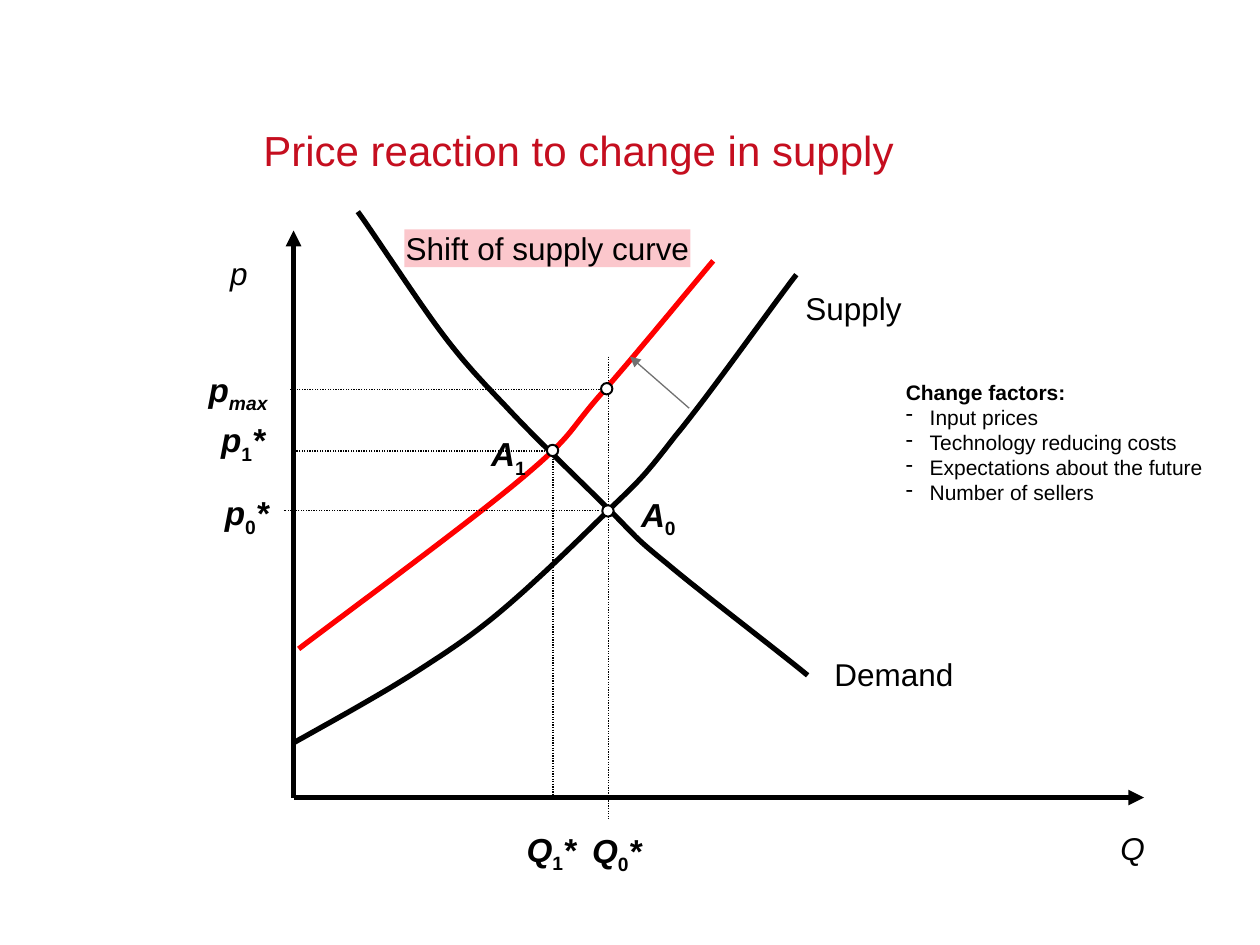
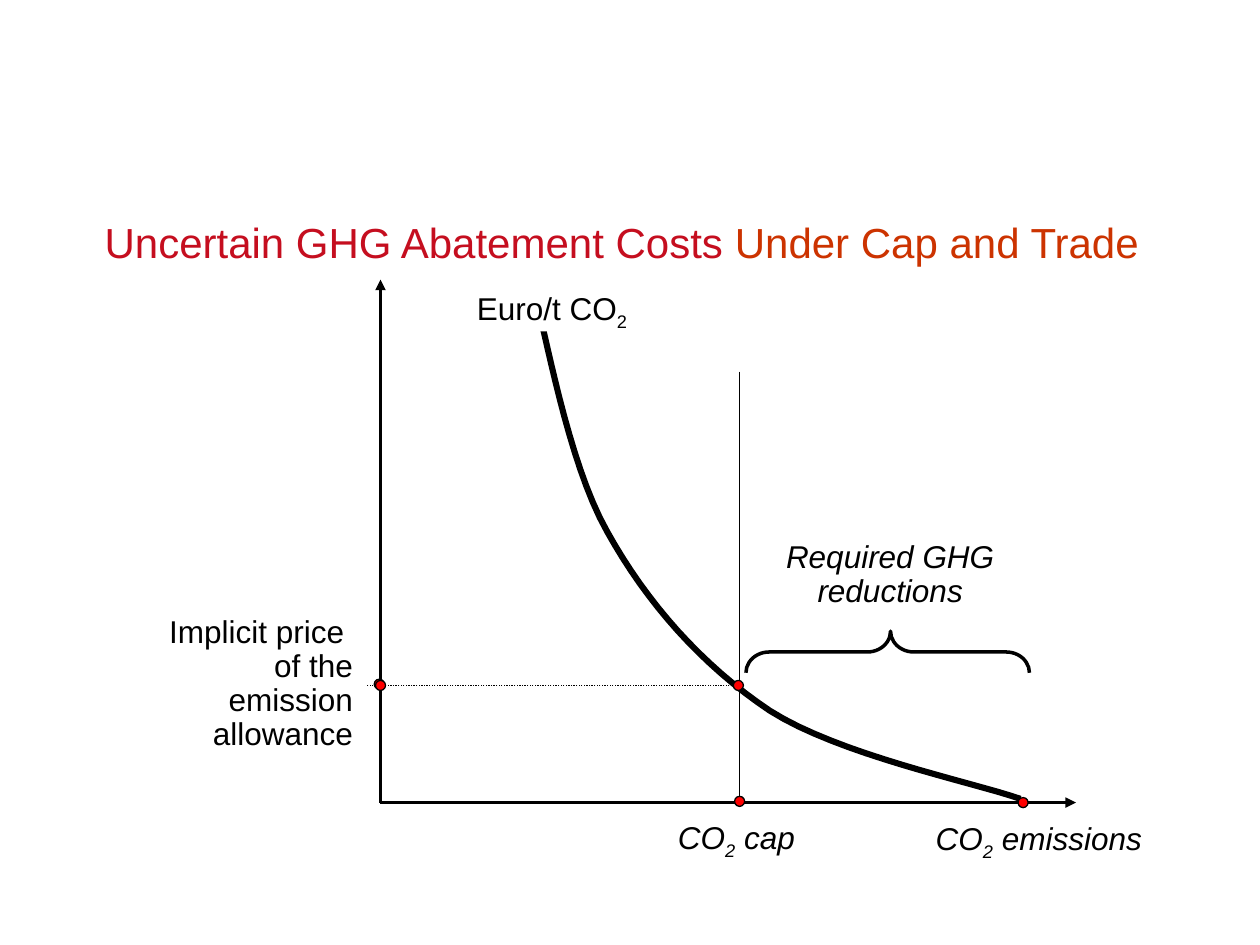
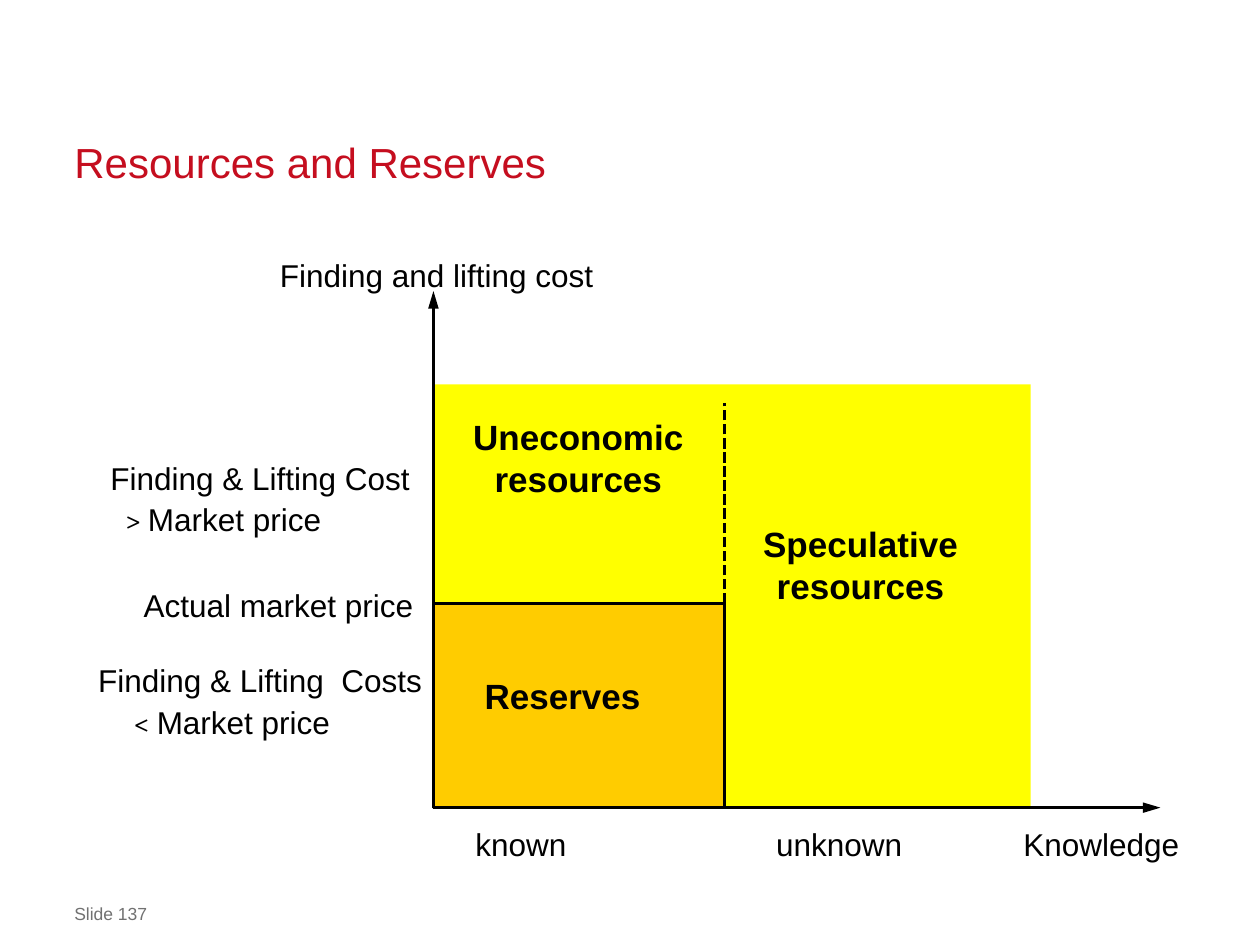
from dataclasses import dataclass

from lxml.etree import SubElement
from pptx import Presentation
from pptx.dml.color import RGBColor
from pptx.enum.dml import MSO_LINE_DASH_STYLE as Dash
from pptx.enum.shapes import MSO_CONNECTOR, MSO_SHAPE
from pptx.enum.text import MSO_ANCHOR, MSO_AUTO_SIZE, PP_ALIGN as Align
from pptx.oxml.ns import qn
from pptx.util import Pt

SCALE = 9144
TITLE_ONLY = 5


@dataclass(frozen=True)
class Theme:
    """Colours, fonts and type sizes of the deck."""
    title: str = "C50E1F"
    accent: str = "CC3300"
    ink: str = "000000"
    grey: str = "717171"
    white: str = "FFFFFF"
    red: str = "FF0000"
    pink: str = "FBC7CC"
    yellow: str = "FFFF00"
    orange: str = "FFCC00"
    font: str = "Arial"
    sign_font: str = "Cambria"
    title_size: int = 24
    title_leading: int = 30
    area_size: int = 20
    symbol_size: int = 19
    label_size: int = 18
    sign_size: int = 17
    note_size: int = 12
    footer_size: int = 10


THEME = Theme()


@dataclass(frozen=True)
class Box:
    """A rectangle in px on the page."""
    left: int
    top: int
    width: int
    height: int

    def sub(self, left, top, width, height):
        """Return a box placed relative to this one."""
        return Box(self.left + left, self.top + top, width, height)

    def point(self, x, y):
        """Return a relative point in EMU."""
        return (self.left + x) * SCALE, (self.top + y) * SCALE

    def emu(self):
        """Return left, top, width and height in EMU."""
        return tuple(n * SCALE for n in (self.left, self.top, self.width, self.height))


def format_font(font, name=None, size=None, color=None, bold=None, italic=None):
    """Set the given traits of a font."""
    if name:
        font.name = name
    if size:
        font.size = Pt(size)
    if color:
        font.color.rgb = RGBColor.from_string(color)
    if bold is not None:
        font.bold = bold
    if italic is not None:
        font.italic = italic


def subscripts(text, **traits):
    """Split text at underscores into spans, every second one a subscript."""
    return [(part, dict(traits, baseline=-25000) if index % 2 else {})
            for index, part in enumerate(text.split("_")) if part]


def write(para, content, align=Align.LEFT, spacing=None, **traits):
    """Fill a paragraph with a string or with spans of text and traits."""
    para.alignment = align
    if spacing:
        para.line_spacing = spacing
    base = dict(name=THEME.font, size=THEME.label_size, color=THEME.ink)
    format_font(para.font, **{**base, **traits})
    spans = [(content, {})] if isinstance(content, str) else content
    for text, extra in spans:
        extra = dict(extra)
        baseline = extra.pop("baseline", None)
        for index, piece in enumerate(text.split("\n")):
            if index:
                para.add_line_break()
            span = para.add_run()
            span.text = piece
            format_font(span.font, **extra)
            if baseline:
                span.font._element.set("baseline", str(baseline))


def set_frame(frame, inset=(0, 0), wrap=True, anchor=MSO_ANCHOR.TOP):
    """Set the margins, wrapping and anchor of a text frame."""
    frame.auto_size = MSO_AUTO_SIZE.NONE
    frame.word_wrap = wrap
    frame.vertical_anchor = anchor
    frame.margin_left = frame.margin_right = inset[0] * SCALE
    frame.margin_top = frame.margin_bottom = inset[1] * SCALE


def add_text(page, box, content, fill=None, inset=(0, 0), wrap=False,
             align=Align.CENTER, **style):
    """Add a one-paragraph text box."""
    shape = page.shapes.add_textbox(*box.emu())
    if fill:
        shape.fill.solid()
        shape.fill.fore_color.rgb = RGBColor.from_string(fill)
    set_frame(shape.text_frame, inset, wrap)
    write(shape.text_frame.paragraphs[0], content, align, **style)


def set_line(line, width, color=THEME.ink):
    """Set the width and colour of a line."""
    line.width = Pt(width)
    line.color.rgb = RGBColor.from_string(color)


def add_line(page, box, start, end, width=0.75, color=THEME.ink, dash=None, arrow=None):
    """Add a straight line, with an arrowhead of the given length if any."""
    line = page.shapes.add_connector(
        MSO_CONNECTOR.STRAIGHT, *box.point(*start), *box.point(*end))
    set_line(line.line, width, color)
    if dash:
        line.line.dash_style = dash
    if arrow:
        SubElement(line.line._get_or_add_ln(), qn("a:tailEnd"),
                   type="triangle", w="med", len=arrow)
    SubElement(line._element.spPr, qn("a:effectLst"))


def add_axes(page, box, width, arrow="med"):
    """Draw both axes from the lower left corner of the plot."""
    for end in ((box.width, box.height), (0, 0)):
        add_line(page, box, (0, box.height), end, width, arrow=arrow)


def add_shape(page, box, kind, fill=None, line=None, color=THEME.ink):
    """Add a preset shape with an optional fill and outline."""
    shape = page.shapes.add_shape(kind, *box.emu())
    shape.shadow.inherit = False
    if fill:
        shape.fill.solid()
        shape.fill.fore_color.rgb = RGBColor.from_string(fill)
    else:
        shape.fill.background()
    if line:
        set_line(shape.line, line, color)
    else:
        shape.line.fill.background()
    return shape


def add_markers(page, box, corners, size, fill, line):
    """Add equal round markers at the given corners."""
    for x, y in corners:
        add_shape(page, box.sub(x, y, size, size), MSO_SHAPE.OVAL, fill, line)


def bezier_points(knots, steps=16):
    """Yield points along a chain of cubic curves."""
    yield knots[0]
    for first in range(0, len(knots) - 1, 3):
        controls = knots[first:first + 4]
        for step in range(1, steps + 1):
            t = step / steps
            weights = ((1 - t) ** 3, 3 * t * (1 - t) ** 2, 3 * t * t * (1 - t), t ** 3)
            yield tuple(sum(w * c[axis] for w, c in zip(weights, controls))
                        for axis in (0, 1))


def add_curve(page, box, knots, width, color=THEME.ink):
    """Draw an open smooth curve through a chain of control points."""
    start, *rest = (box.point(*point) for point in bezier_points(knots))
    builder = page.shapes.build_freeform(round(start[0]), round(start[1]))
    builder.add_line_segments([(round(x), round(y)) for x, y in rest], close=False)
    curve = builder.convert_to_shape()
    curve.shadow.inherit = False
    curve.fill.background()
    set_line(curve.line, width, color)


def add_page(deck, box, title):
    """Add a title-only slide and format its title."""
    page = deck.slides.add_slide(deck.slide_layouts[TITLE_ONLY])
    holder = page.shapes.title
    holder.left, holder.top, holder.width, holder.height = box.emu()
    set_frame(holder.text_frame, anchor=MSO_ANCHOR.BOTTOM)
    write(holder.text_frame.paragraphs[0], title, spacing=Pt(THEME.title_leading),
          size=THEME.title_size, color=THEME.title)
    return page


def supply_plot(page, box):
    """Draw demand, old and new supply with their equilibria."""
    demand = [(51, -15), (62, 0), (94, 49), (113, 75), (132, 101), (145, 115),
              (168, 139), (191, 164), (230, 201), (251, 222), (272, 243),
              (270, 243), (296, 264), (322, 286), (385, 334), (408, 353)]
    supply = [(1, 406), (17, 397), (68, 369), (96, 351), (124, 333), (141, 322),
              (167, 300), (193, 278), (230, 242), (253, 219), (276, 197),
              (279, 194), (303, 163), (328, 133), (379, 61), (399, 35)]
    shifted = [(333, 24), (317, 43), (267, 104), (242, 132), (217, 161),
               (222, 162), (183, 195), (143, 229), (41, 304), (4, 332)]
    for knots, color in ((demand, THEME.ink), (supply, THEME.ink), (shifted, THEME.red)):
        add_curve(page, box, knots, 3, color)

    guides = [((250, 100), (250, 467)), ((242, 222), (-8, 222)),
              ((208, 175), (0, 175)), ((206, 179), (206, 448)),
              ((247, 126), (-3, 126))]
    for start, end in guides:
        add_line(page, box, start, end, dash=Dash.ROUND_DOT)
    add_axes(page, box, 3)
    add_line(page, box, (314, 141), (267, 100), color=THEME.grey, arrow="med")
    add_markers(page, box, [(201, 170), (244, 121), (245, 218)], 9, THEME.white, 1.13)

    symbols = [("A_0", 275, 209, 29), ("A_1", 156, 161, 29),
               ("Q_0_*", 236, 476, 41), ("Q_1_*", 184, 475, 41),
               ("p_0_*", -55, 208, 36), ("p_1_*", -58, 150, 36),
               ("p_max", -70, 110, 52)]
    for text, x, y, width in symbols:
        spans = subscripts(text, italic=text.endswith("max"))
        add_text(page, box.sub(x, y, width, 32), spans,
                 size=THEME.symbol_size, bold=True, italic=True)

    labels = [("p", -86, 19, 85, True, None), ("Q", 656, 475, 20, True, None),
              ("Demand", 429, 337, 95, False, None),
              ("Supply", 406, 46, 77, False, None),
              ("Shift of supply curve", 88, -1, 227, False, THEME.pink)]
    for text, x, y, width, italic, fill in labels:
        add_text(page, box.sub(x, y, width, 30), text, fill, italic=italic)


def change_factors(page, box):
    """List the factors that shift supply."""
    frame = page.shapes.add_textbox(*box.emu()).text_frame
    set_frame(frame, (10, 5))
    write(frame.paragraphs[0], "Change factors:", size=THEME.note_size, bold=True)
    for factor in ("Input prices", "Technology reducing costs",
                   "Expectations about the future", "Number of sellers"):
        para = frame.add_paragraph()
        props = para._p.get_or_add_pPr()
        props.set("marL", str(19 * SCALE))
        props.set("indent", str(-19 * SCALE))
        SubElement(props, qn("a:buChar"), char="-")
        write(para, factor, size=THEME.note_size)


def abatement_plot(page, box):
    """Draw the abatement cost curve with the cap and the implied price."""
    costs = [(121, 7), (131, 39), (148, 144), (180, 200), (211, 256),
             (255, 306), (309, 342), (364, 377), (467, 398), (508, 412)]
    add_curve(page, box, costs, 3.5)
    add_line(page, box, (285, 73), (285, 416))
    add_axes(page, box, 2)
    labels = [
        (subscripts("Euro/t CO_2"), (15, 3, 242, 38), Align.CENTER, False),
        ("Required GHG\nreductions", (299, 203, 211, 64), Align.CENTER, True),
        ("Implicit price \nof the\nemission allowance", (-223, 262, 211, 119),
         Align.RIGHT, False),
        (subscripts("CO_2_ cap"), (186, 423, 193, 41), Align.CENTER, True)]
    for content, place, align, italic in labels:
        add_text(page, box.sub(*place), content, THEME.white, (10, 5), True,
                 align, spacing=0.9, italic=italic)
    add_text(page, box.sub(381, 420, 283, 48), subscripts("CO_2_ emissions"),
             inset=(10, 5), wrap=True, spacing=1.1, italic=True)

    brace = add_shape(page, box.sub(386, 183, 33, 225), MSO_SHAPE.LEFT_BRACE, line=2)
    brace.rotation = 90
    brace.adjustments[0] = 0.56
    brace.adjustments[1] = 0.49
    add_line(page, box, (279, 322), (-11, 322), dash=Dash.ROUND_DOT)
    corners = [(506, 411), (281, 410), (280, 318), (-5, 317), (-4, 318)]
    add_markers(page, box, corners, 8, THEME.red, 0.75)


def reserves_plot(page, box):
    """Draw the areas of resources by knowledge and cost."""
    add_shape(page, box.sub(0, 74, 474, 336), MSO_SHAPE.RECTANGLE, THEME.yellow)
    add_shape(page, box.sub(0, 248, 231, 162), MSO_SHAPE.RECTANGLE, THEME.orange, 2)
    areas = [("Uneconomic\nresources", (31, 99, 168, 67), None),
             ("Speculative\nresources", (261, 184, 156, 67), None),
             ("Reserves", (40, 304, 125, 34), THEME.orange)]
    for text, place, fill in areas:
        add_text(page, box.sub(*place), text, fill, size=THEME.area_size, bold=True)
    add_line(page, box, (231, 248), (231, 89), 2, dash=Dash.SQUARE_DOT)
    add_axes(page, box, 2, "lg")

    sign = dict(name=THEME.sign_font, size=THEME.sign_size)
    labels = [("Finding and lifting cost", -123, -28, 251),
              ("Finding & Lifting  Costs", -268, 294, 261),
              ([("< ", sign), ("Market price", {})], -239, 327, 158),
              ("Finding & Lifting Cost", -289, 133, 303),
              ([("> ", sign), ("Market price", {})], -246, 166, 158),
              ("Actual market price", -231, 234, 216),
              ("known", 33, 424, 73),
              ("unknown", 272, 424, 100),
              ("Knowledge", 468, 424, 124)]
    for content, x, y, width in labels:
        add_text(page, box.sub(x, y, width, 30), content)


def main():
    """Build the deck."""
    deck = Presentation()
    deck.slide_width, deck.slide_height = 1000 * SCALE, 750 * SCALE

    page = add_page(deck, Box(209, 100, 733, 39), "Price reaction to change in supply")
    supply_plot(page, Box(233, 183, 675, 450))
    change_factors(page, Box(709, 296, 262, 111))

    page = add_page(deck, Box(83, 131, 834, 81),
                    [("Uncertain GHG Abatement Costs ", {}),
                     ("Under Cap and Trade", {"color": THEME.accent})])
    abatement_plot(page, Box(302, 222, 552, 415))

    page = add_page(deck, Box(59, 106, 882, 42), "Resources and Reserves")
    reserves_plot(page, Box(344, 231, 577, 410))
    add_text(page, Box(59, 717, 724, 17), "Slide 137", align=Align.LEFT, wrap=True,
             size=THEME.footer_size, color=THEME.grey)

    deck.save("out.pptx")


if __name__ == "__main__":
    main()
